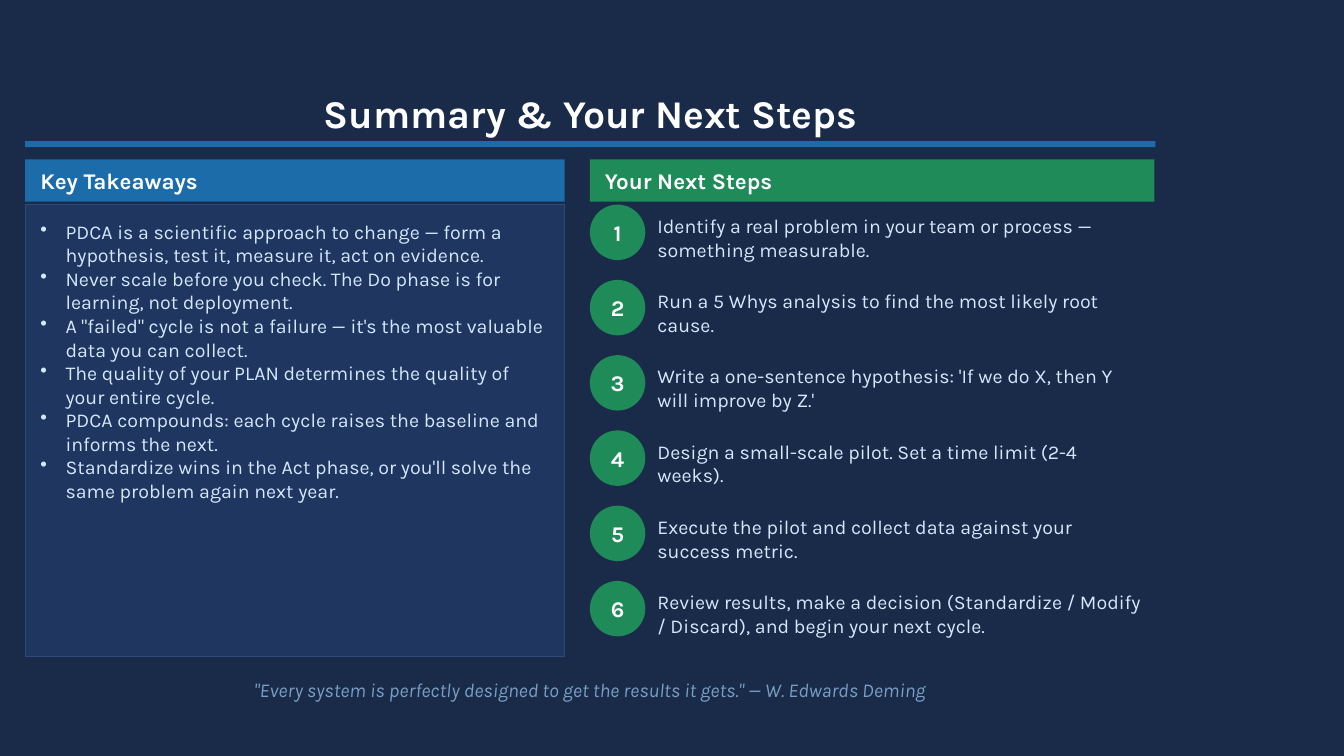
from lxml import etree
from pptx import Presentation
from pptx.dml.color import RGBColor
from pptx.enum.shapes import MSO_SHAPE
from pptx.enum.text import MSO_ANCHOR, PP_ALIGN
from pptx.oxml.ns import qn
from pptx.util import Inches, Pt

RECTANGLE, OVAL = MSO_SHAPE.RECTANGLE, MSO_SHAPE.OVAL
TOP, MIDDLE = MSO_ANCHOR.TOP, MSO_ANCHOR.MIDDLE
LEFT, CENTER = PP_ALIGN.LEFT, PP_ALIGN.CENTER

NAVY, PANEL, PANEL_EDGE = "1A2B4A", "1E3660", "2D4A7A"
BLUE, GREEN, WHITE = "1B6CA8", "1E8B58", "FFFFFF"
PALE_BLUE, MUTED_BLUE = "D4E8FB", "7A9EC4"

MARGIN, CONTENT_WIDTH = 0.25, 11.21
TAKEAWAYS_WIDTH = 5.35
STEPS_LEFT, STEPS_WIDTH = 5.85, 5.6
HEADER_TOP, HEADER_HEIGHT = 1.58, 0.42
BODY_TOP, BODY_HEIGHT = 2.03, 4.48
BADGE_SIZE, STEP_TEXT_OFFSET = 0.55, 0.67

TAKEAWAYS = [
    "PDCA is a scientific approach to change — form a hypothesis, test it, measure it, act on evidence.",
    "Never scale before you check. The Do phase is for learning, not deployment.",
    "A \"failed\" cycle is not a failure — it's the most valuable data you can collect.",
    "The quality of your PLAN determines the quality of your entire cycle.",
    "PDCA compounds: each cycle raises the baseline and informs the next.",
    "Standardize wins in the Act phase, or you'll solve the same problem again next year.",
]
STEPS = [
    "Identify a real problem in your team or process — something measurable.",
    "Run a 5 Whys analysis to find the most likely root cause.",
    "Write a one-sentence hypothesis: 'If we do X, then Y will improve by Z.'",
    "Design a small-scale pilot. Set a time limit (2-4 weeks).",
    "Execute the pilot and collect data against your success metric.",
    "Review results, make a decision (Standardize / Modify / Discard), and begin your next cycle.",
]


def color(hex_code):
    return RGBColor.from_string(hex_code)


class SlideBuilder:
    font_name = "Karla"

    def __init__(self, slide):
        self.slide = slide
        background = slide.background.fill
        background.solid()
        background.fore_color.rgb = color(NAVY)

    def shape(self, kind, left, top, width, height, fill, edge=None):
        shape = self.slide.shapes.add_shape(
            kind, Inches(left), Inches(top), Inches(width), Inches(height))
        shape.shadow.inherit = False
        shape.fill.solid()
        shape.fill.fore_color.rgb = color(fill)
        if edge:
            shape.line.color.rgb = color(edge)
            shape.line.width = Pt(0.72)
        else:
            shape.line.fill.background()
        return shape

    def text_box(self, left, top, width, height, text, **style):
        box = self.slide.shapes.add_textbox(
            Inches(left), Inches(top), Inches(width), Inches(height))
        self.set_text(box, [text], **style)

    def set_text(self, holder, lines, size=14, ink=PALE_BLUE, bold=False, italic=False,
                 align=LEFT, anchor=MIDDLE, insets=(0.1, 0.05, 0.1, 0.05), bulleted=False):
        """Fill a shape or box with paragraphs; insets run left, top, right, bottom."""
        frame = holder.text_frame
        frame.word_wrap = True
        frame.vertical_anchor = anchor
        (frame.margin_left, frame.margin_top,
         frame.margin_right, frame.margin_bottom) = map(Inches, insets)
        for index, line in enumerate(lines):
            paragraph = frame.add_paragraph() if index else frame.paragraphs[0]
            paragraph.text = line
            paragraph.alignment = align
            if bulleted:
                self.add_bullet(paragraph)
            font = paragraph.font
            font.name, font.size = self.font_name, Pt(size)
            font.bold, font.italic = bold, italic
            font.color.rgb = color(ink)

    def add_bullet(self, paragraph):
        properties = paragraph._p.get_or_add_pPr()
        properties.set("marL", str(Inches(0.25)))
        properties.set("indent", str(-Inches(0.25)))
        etree.SubElement(properties, qn("a:buChar")).set("char", "•")

    def column_header(self, left, width, text, fill):
        header = self.shape(RECTANGLE, left, HEADER_TOP, width, HEADER_HEIGHT, fill)
        self.set_text(header, [text], size=16, ink=WHITE, bold=True, insets=(0.15, 0, 0.1, 0))

    def takeaways_panel(self):
        panel = self.shape(RECTANGLE, MARGIN, BODY_TOP, TAKEAWAYS_WIDTH, BODY_HEIGHT,
                           PANEL, PANEL_EDGE)
        self.set_text(panel, TAKEAWAYS, anchor=TOP, insets=(0.15,) * 4, bulleted=True)

    def step(self, number, top, text):
        badge = self.shape(OVAL, STEPS_LEFT, top, BADGE_SIZE, BADGE_SIZE, GREEN)
        self.set_text(badge, [str(number)], size=16, ink=WHITE, bold=True, align=CENTER,
                      insets=(0,) * 4)
        self.text_box(STEPS_LEFT + STEP_TEXT_OFFSET, top, STEPS_WIDTH - STEP_TEXT_OFFSET,
                      0.65, text, insets=(0, 0, 0.12, 0))


def main():
    presentation = Presentation()
    presentation.slide_width, presentation.slide_height = Inches(13.33), Inches(7.5)
    builder = SlideBuilder(presentation.slides.add_slide(presentation.slide_layouts[6]))

    builder.text_box(MARGIN, 0.81, CONTENT_WIDTH, 0.62, "Summary & Your Next Steps",
                     size=28, ink=WHITE, bold=True, align=CENTER)
    builder.shape(RECTANGLE, MARGIN, 1.4, CONTENT_WIDTH, 0.06, BLUE)

    builder.column_header(MARGIN, TAKEAWAYS_WIDTH, "Key Takeaways", BLUE)
    builder.takeaways_panel()

    builder.column_header(STEPS_LEFT, STEPS_WIDTH, "Your Next Steps", GREEN)
    step_pitch = BODY_HEIGHT / len(STEPS)
    for index, text in enumerate(STEPS):
        builder.step(index + 1, BODY_TOP + index * step_pitch, text)

    builder.text_box(
        MARGIN, 6.62, CONTENT_WIDTH, 0.44,
        "\"Every system is perfectly designed to get the results it gets.\" — W. Edwards Deming",
        ink=MUTED_BLUE, italic=True, align=CENTER)
    presentation.save("out.pptx")


if __name__ == "__main__":
    main()
